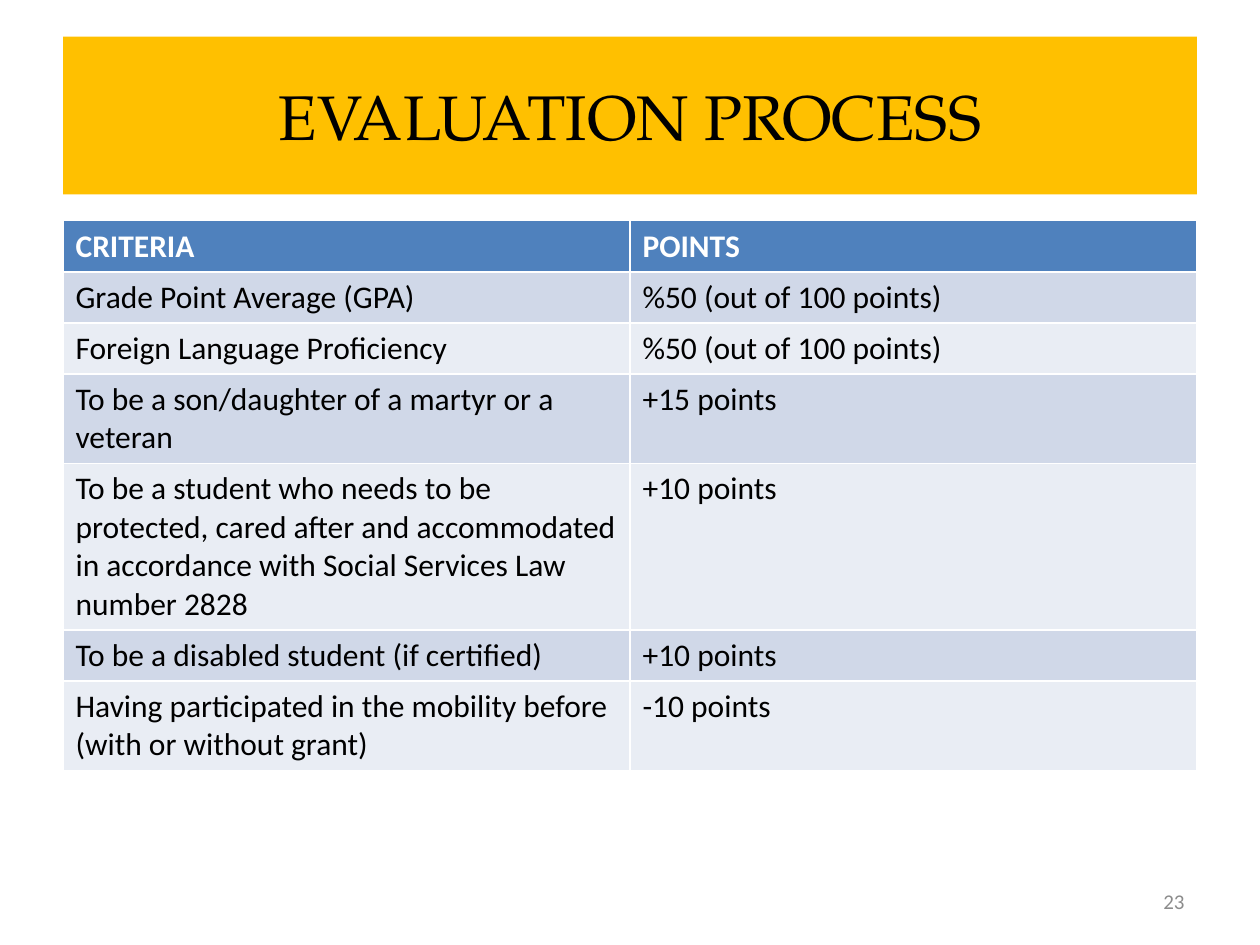
from pptx import Presentation
from pptx import util as u
from pptx.dml.color import RGBColor
from pptx.enum import text


def tint(part, shade):
    """Give a fill or a font a solid colour from a hex string."""
    if hasattr(part, "solid"):
        part.solid()
        part.fore_color.rgb = RGBColor.from_string(shade)
    else:
        part.color.rgb = RGBColor.from_string(shade)


def write(frame, words, shade, align, **style):
    frame.text = words
    para = frame.paragraphs[0]
    para.alignment = align
    font = para.runs[0].font
    tint(font, shade)
    for name, value in style.items():
        setattr(font, name, value)


deck = Presentation()
deck.slide_width, deck.slide_height = u.Cm(25.4), u.Cm(19.05)
slide = deck.slides.add_slide(deck.slide_layouts[5])
side = text.PP_ALIGN
middle = text.MSO_ANCHOR.MIDDLE

# Title band
title = slide.shapes.title
place = {"left": 1.27, "top": 0.74, "width": 22.86, "height": 3.18}
for name, size in place.items():
    setattr(title, name, u.Cm(size))
tint(title.fill, "FFC000")
title.text_frame.vertical_anchor = middle
write(title.text_frame, "EVALUATION PROCESS", "000000", side.CENTER,
      size=u.Pt(36), name="TeX Gyre Pagella")

# Criteria and points
rows = [
    ("CRITERIA", "POINTS"),
    ("Grade Point Average (GPA)", "%50 (out of 100 points)"),
    ("Foreign Language Proficiency", "%50 (out of 100 points)"),
    ("To be a son/daughter of a martyr or a veteran", "+15 points"),
    ("To be a student who needs to be protected, cared after and "
     "accommodated in accordance with Social Services Law number 2828",
     "+10 points"),
    ("To be a disabled student (if certified)", "+10 points"),
    ("Having participated in the mobility before (with or without grant)",
     "-10 points"),
]
bands = ["E9EDF4", "D0D8E8"]
grid = slide.shapes.add_table(len(rows), 2, u.Cm(1.27), u.Cm(4.45),
                              u.Cm(22.86), u.Cm(1.03 * len(rows))).table
for r, row in enumerate(rows):
    head = r == 0
    for c, words in enumerate(row):
        cell = grid.cell(r, c)
        tint(cell.fill, "4F81BD" if head else bands[r % 2])
        write(cell.text_frame, words, "FFFFFF" if head else "000000",
              side.LEFT, size=u.Pt(18), name="Calibri", bold=head)

# Page number
page = slide.shapes.add_textbox(u.Cm(18.2), u.Cm(17.66), u.Cm(5.93), u.Cm(1.01))
page.text_frame.word_wrap = True
page.text_frame.vertical_anchor = middle
write(page.text_frame, "23", "8C8C8C", side.RIGHT, size=u.Pt(12), name="Calibri")

deck.save("out.pptx")
